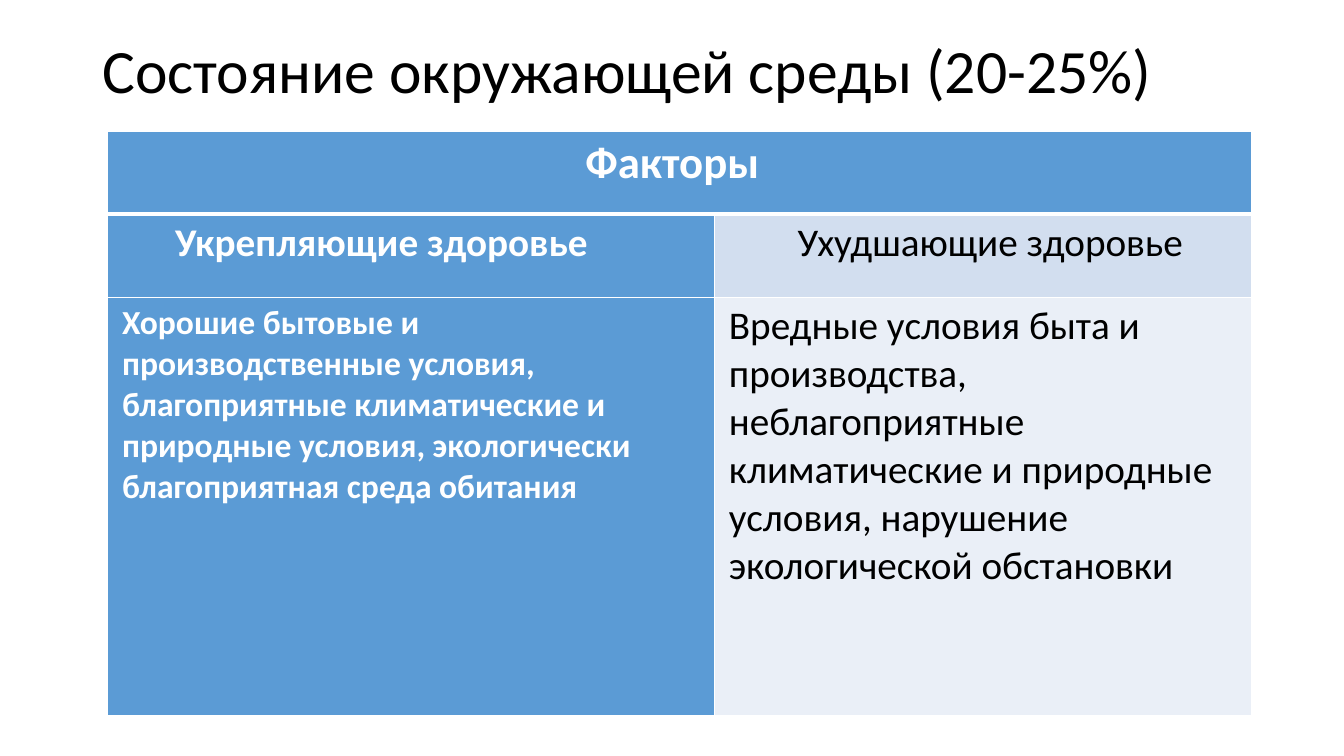
import pptx
import pptx.dml.color
import pptx.enum.text
import pptx.oxml
import pptx.oxml.ns
import pptx.util

Pt = pptx.util.Pt

COLOURS = {
    "ink": "000000",
    "white": "FFFFFF",
    "blue": "5B9BD5",
    "band": "D2DEEF",
    "pale": "EAEFF7",
}


class SlideBuilder:
    font = "Calibri"

    def __init__(self, slide):
        self.slide = slide

    def colour(self, name):
        return pptx.dml.color.RGBColor.from_string(COLOURS[name])

    def style(self, paragraph, size, colour, bold=False):
        paragraph.alignment = pptx.enum.text.PP_ALIGN.LEFT
        paragraph.font.name = self.font
        paragraph.font.size = Pt(size)
        paragraph.font.bold = bold
        paragraph.font.color.rgb = self.colour(colour)

    def title(self, text, left, top, width, height):
        title = self.slide.shapes.title
        title.left, title.top = Pt(left), Pt(top)
        title.width, title.height = Pt(width), Pt(height)
        frame = title.text_frame
        frame.text = text
        frame.auto_size = pptx.enum.text.MSO_AUTO_SIZE.NONE
        frame.vertical_anchor = pptx.enum.text.MSO_ANCHOR.MIDDLE
        frame.paragraphs[0].line_spacing = 0.9
        self.style(frame.paragraphs[0], 44, "ink")

    def table(self, left, top, widths, heights):
        table = self.slide.shapes.add_table(
            len(heights), len(widths), Pt(left), Pt(top),
            Pt(sum(widths)), Pt(sum(heights))).table
        for column, width in zip(table.columns, widths):
            column.width = Pt(width)
        for row, height in zip(table.rows, heights):
            row.height = Pt(height)
        return table

    def borders(self, cell, **widths):
        properties = cell._tc.get_or_add_tcPr()
        for position, side in enumerate("LRTB"):
            line = pptx.oxml.parse_xml(
                f'<a:ln{side} {pptx.oxml.ns.nsdecls("a")} w="{Pt(widths.get(side, 1))}">'
                f'<a:solidFill><a:srgbClr val="{COLOURS["white"]}"/></a:solidFill>'
                f'</a:ln{side}>')
            properties.insert(position, line)

    def cell(self, cell, text, fill, size, colour, bold, indent, spacing=0):
        cell.text = text
        cell.fill.solid()
        cell.fill.fore_color.rgb = self.colour(fill)
        paragraph = cell.text_frame.paragraphs[0]
        self.style(paragraph, size, colour, bold)
        paragraph.space_before = paragraph.space_after = Pt(spacing)
        paragraph._p.get_or_add_pPr().set("marL", str(Pt(indent)))


def main():
    deck = pptx.Presentation()
    deck.slide_width, deck.slide_height = Pt(960), Pt(540)
    builder = SlideBuilder(deck.slides.add_slide(deck.slide_layouts[5]))

    # Title
    builder.title("Состояние окружающей среды (20-25%)", 66, 14.4, 894, 75.6)

    # Table of factors
    factors = builder.table(77, 93.6, [433.5, 383.5], [59.5, 59.5, 298.5])
    factors.cell(0, 0).merge(factors.cell(0, 1))

    # Text, fill, size, colour, bold, indent, paragraph spacing
    contents = {
        (0, 0): ("Факторы", "blue", 32, "white", True, 334),
        (1, 0): ("Укрепляющие здоровье", "blue", 28, "white", True, 41),
        (1, 1): ("Ухудшающие здоровье", "band", 28, "ink", False, 52),
        (2, 0): ("Хорошие бытовые и производственные условия, благоприятные "
                 "климатические и природные условия, экологически "
                 "благоприятная среда обитания",
                 "blue", 24, "white", True, 3, 3),
        (2, 1): ("Вредные условия быта и производства, неблагоприятные "
                 "климатические и природные условия, нарушение "
                 "экологической обстановки",
                 "pale", 28, "ink", False, 3, 3),
    }
    for place, content in contents.items():
        builder.cell(factors.cell(*place), *content)

    # White grid with a heavier rule below the heading
    heading_rule = {0: {"B": 3}, 1: {"T": 3}}
    for row in range(3):
        for column in range(2):
            builder.borders(factors.cell(row, column), **heading_rule.get(row, {}))

    deck.save("out.pptx")


if __name__ == "__main__":
    main()
